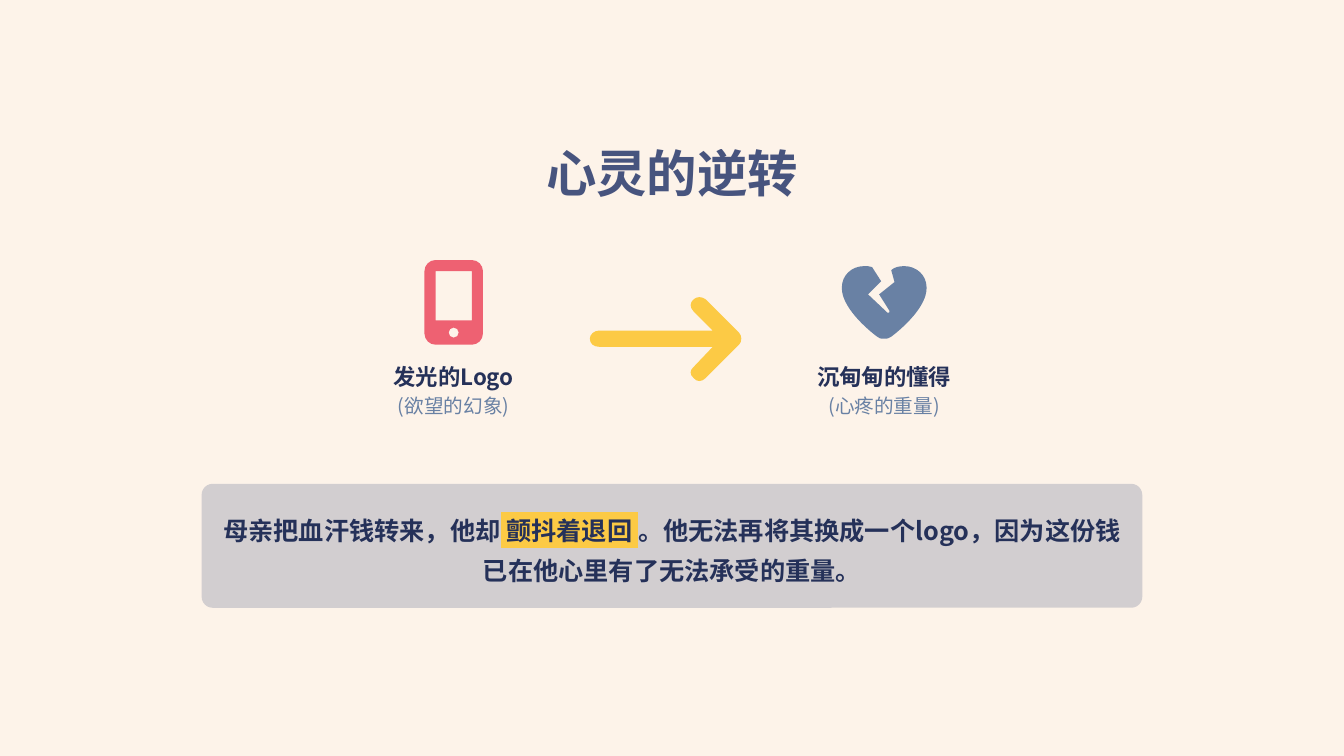
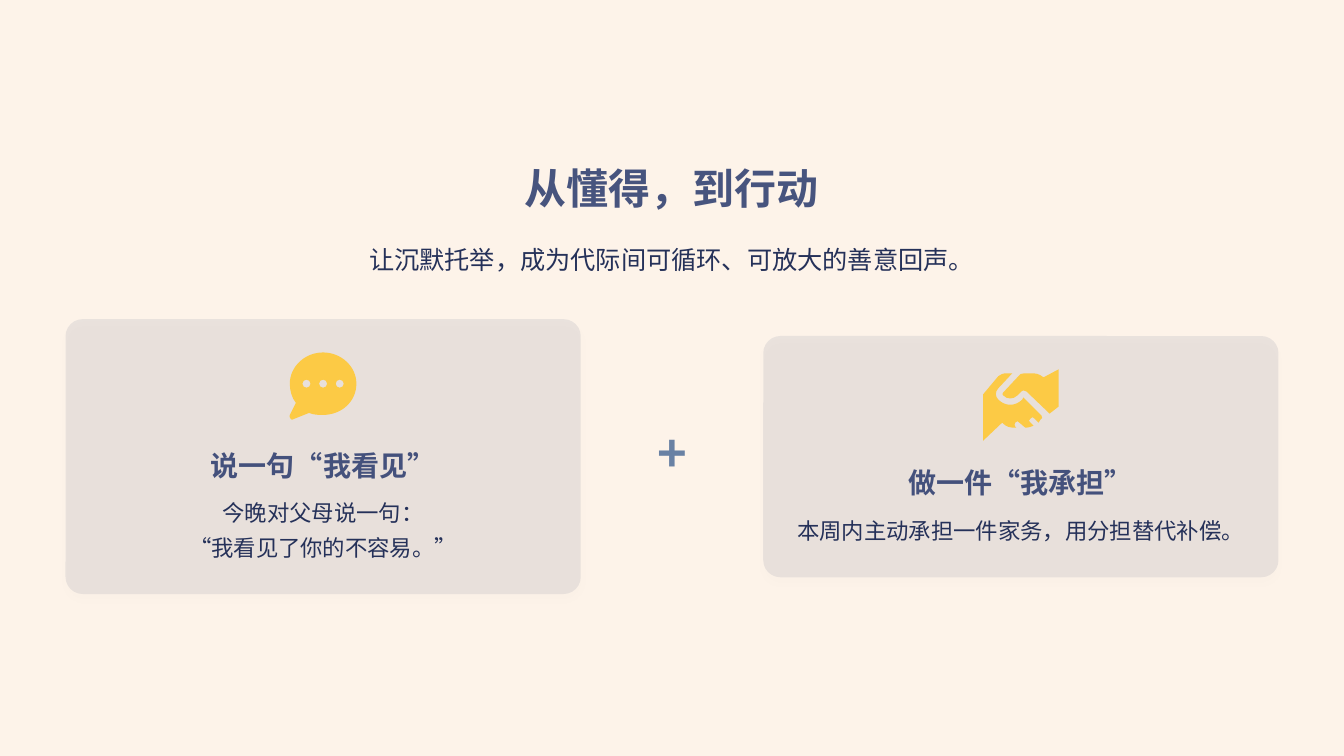
from lxml import etree
from pptx import Presentation
from pptx import util as u
from pptx.dml.color import RGBColor
from pptx.enum import shapes, text
from pptx.oxml.ns import qn

FONT = "Noto Sans CJK SC"
COLORS = {
    "cream": "FDF3E9",
    "indigo": "2A3A6D",
    "ink": "253159",
    "slate": "6981A4",
    "coral": "EE6172",
    "yellow": "FCCA45",
    "black": "000000",
}
TITLE_ALPHA = 85
CENTER, LEFT = text.PP_ALIGN.CENTER, text.PP_ALIGN.LEFT

# Outlines in hundredths of an inch: M move, L line, C cubic curve, O circle (centre, radius).
PHONE = """M 2 11 C 2 5 7 0 13 0 L 49 0 C 55 0 60 5 60 11 L 60 73 C 60 79 55 84 49 84
    L 13 84 C 7 84 2 79 2 73 L 2 11 M 13 11 L 13 60 L 49 60 L 49 11 L 13 11 O 31 72 5"""
ARROW = """M 148 73 C 151 70 151 64 148 61 L 115 28 C 111 25 106 25 103 28
    C 99 31 99 36 103 40 L 122 59 L 9 59 C 4 59 0 63 0 67 C 0 72 4 75 9 75 L 122 75
    L 103 95 C 99 98 99 103 103 106 C 106 110 111 110 115 106 L 148 73"""
BROKEN_HEART = """M 22 6 C 25 6 28 6 30 7 L 39 21 L 27 33 C 26 34 26 34 26 34
    C 26 35 27 35 27 35 L 45 52 C 45 52 46 53 47 52 C 47 52 47 51 47 50 L 37 34 L 52 22
    C 52 22 53 21 52 21 L 49 10 C 52 7 57 6 62 6 C 74 6 84 15 84 27 L 84 28
    C 84 46 61 67 49 76 C 47 78 44 78 42 78 C 39 78 37 78 35 76 C 23 67 0 46 0 28
    L 0 27 C 0 15 10 6 22 6"""
SPEECH = """M 33 62 C 51 62 66 49 66 31 C 66 14 51 0 33 0 C 15 0 0 14 0 31
    C 0 38 2 45 6 50 L 0 62 C -1 63 0 65 1 66 C 1 67 3 67 4 66 L 19 60
    C 24 62 28 62 33 62 O 16.5 31 4 O 33 31 4 O 49.5 31 4"""
HANDSHAKE = """M 35 7 L 20 23 C 19 24 19 25 20 26 C 24 30 30 30 34 26 L 38 22
    C 39 21 39 21 40 21 C 41 21 42 21 43 22 L 66 44 L 75 37 L 75 0 L 60 8 L 57 6
    C 55 5 53 4 50 4 L 41 4 C 41 4 41 4 41 4 C 38 4 36 5 35 7
    M 15 19 L 29 4 L 24 4 C 20 4 17 5 15 7 L 0 25 L 0 71 L 19 53 L 20 54
    C 23 57 27 58 31 58 L 33 58 L 32 57 C 31 56 31 54 32 53 C 33 51 35 51 36 53
    L 42 58 L 43 58 C 45 58 48 57 50 56 L 47 53 C 45 52 45 50 47 49
    C 48 47 50 47 51 49 L 55 53 L 57 50 C 59 49 59 48 58 46 L 40 28 L 39 30
    C 32 37 22 37 15 30 C 12 27 12 22 15 19"""


def set_solid(fill, color, alpha=100):
    fill.solid()
    fill.fore_color.rgb = RGBColor.from_string(COLORS[color])
    if alpha < 100:
        set_alpha(fill.fore_color._xFill.find(qn("a:srgbClr")), alpha)


def set_alpha(color_element, alpha):
    etree.SubElement(color_element, qn("a:alpha"), val=str(alpha * 1000))


def style_shape(shape, color, alpha=100):
    set_solid(shape.fill, color, alpha)
    shape.line.fill.background()
    shape.shadow.inherit = False


def add_soft_shadow(shape):
    effects = shape._element.spPr.find(qn("a:effectLst"))
    shadow = etree.SubElement(effects, qn("a:outerShdw"), blurRad=str(u.Pt(6)),
                              dist=str(u.Pt(4)), dir="5400000", rotWithShape="0")
    set_alpha(etree.SubElement(shadow, qn("a:srgbClr"), val=COLORS["black"]), 10)


def circle_commands(x, y, radius):
    k = radius * 0.55
    quarters = [((radius, k), (k, radius), (0, radius)),
                ((-k, radius), (-radius, k), (-radius, 0)),
                ((-radius, -k), (-k, -radius), (0, -radius)),
                ((k, -radius), (radius, -k), (radius, 0))]
    curves = [("C", [(x + dx, y + dy) for dx, dy in quarter]) for quarter in quarters]
    return [("M", [(x + radius, y)])] + curves


def outline_commands(outline):
    """Turn an outline into (command, points) pairs, with circles as four curves."""
    lengths = {"M": 2, "L": 2, "C": 6, "O": 3}
    tokens = iter(outline.split())
    commands = []
    for command in tokens:
        values = [float(next(tokens)) for _ in range(lengths[command])]
        if command == "O":
            commands += circle_commands(*values)
        else:
            commands.append((command, list(zip(values[::2], values[1::2]))))
    return commands


def fold_curves(shape, commands):
    """Join the three line points of each curve command into one cubic curve."""
    outline = next(shape._element.iter(qn("a:path")))
    lines = iter(outline.findall(qn("a:lnTo")))
    for command, points in commands:
        if command == "M":
            continue
        group = [next(lines) for _ in points]
        if command == "C":
            curve = etree.Element(qn("a:cubicBezTo"))
            group[0].addprevious(curve)
            for line in group:
                curve.append(line[0])
                outline.remove(line)


def add_icon(slide, outline, left, top, color):
    unit = u.Inches(0.01)
    commands = outline_commands(outline)
    contours = []
    for command, points in commands:
        if command == "M":
            contours.append([])
        contours[-1] += [(x * unit, y * unit) for x, y in points]
    builder = slide.shapes.build_freeform(*contours[0][0])
    for index, contour in enumerate(contours):
        if index:
            builder.move_to(*contour[0])
        builder.add_line_segments(contour[1:], close=True)
    icon = builder.convert_to_shape(u.Inches(left), u.Inches(top))
    fold_curves(icon, commands)
    style_shape(icon, color)


def add_backdrop(slide):
    box = (0, -0.13, 13.33, 7.72)
    backdrop = slide.shapes.add_shape(shapes.MSO_SHAPE.RECTANGLE, *map(u.Inches, box))
    style_shape(backdrop, "cream")


def add_panel(slide, box, radius, alpha):
    panel = slide.shapes.add_shape(shapes.MSO_SHAPE.ROUNDED_RECTANGLE, *map(u.Inches, box))
    panel.adjustments[0] = radius / min(box[2:])
    style_shape(panel, "indigo", alpha)
    return panel


def add_run(paragraph, words, size, color, bold=False, alpha=100, highlight=None):
    run = paragraph.add_run()
    run.text = words
    font = run.font
    font.size, font.bold, font.name = u.Pt(size), bold, FONT
    set_solid(font.fill, color, alpha)
    latin = run._r.get_or_add_rPr().find(qn("a:latin"))
    latin.addnext(etree.Element(qn("a:ea"), typeface=FONT))
    if highlight:
        marker = etree.Element(qn("a:highlight"))
        etree.SubElement(marker, qn("a:srgbClr"), val=COLORS[highlight])
        latin.addprevious(marker)


def add_text(slide, box, lines, size, color, align=CENTER, spacing=1.3, bold=False, alpha=100):
    """Each line is a list of (words, highlight colour) runs or a plain string."""
    frame = slide.shapes.add_textbox(*map(u.Inches, box)).text_frame
    frame.word_wrap = True
    frame.vertical_anchor = text.MSO_ANCHOR.MIDDLE
    frame.margin_left = frame.margin_right = frame.margin_top = frame.margin_bottom = 0
    for index, line in enumerate(lines):
        paragraph = frame.add_paragraph() if index else frame.paragraphs[0]
        paragraph.alignment, paragraph.line_spacing = align, spacing
        for words, highlight in [(line, None)] if isinstance(line, str) else line:
            add_run(paragraph, words, size, color, bold, alpha, highlight)


def add_title(slide, box, words, size, align=CENTER, spacing=1.0):
    add_text(slide, box, [words], size, "indigo", align, spacing, True, TITLE_ALPHA)


def add_concept(slide, center, top, icon, icon_width, color, label, note):
    width = 1.44
    left = center - width / 2
    add_icon(slide, icon, center - icon_width / 2, top, color)
    add_text(slide, (left, top + 0.95, width, 0.33), [label], 16, "ink", bold=True)
    add_text(slide, (left, top + 1.28, width, 0.28), [note], 14, "slate", spacing=1.2)


def add_quote(slide, box, runs):
    left, top, width, height = box
    add_panel(slide, box, 0.11, 20)
    add_text(slide, (left + 0.16, top + 0.22, width - 0.32, height - 0.44),
             [runs], 18, "ink", bold=True)


def add_action_card(slide, left, middle, icon, icon_width, title, lines):
    """The card grows with its lines and stays centred on middle."""
    width, body_height = 5.11, len(lines) / 3
    height = 2.06 + body_height
    top, center = middle - height / 2, left + width / 2
    add_soft_shadow(add_panel(slide, (left, top, width, height), 0.17, 9))
    add_icon(slide, icon, center - icon_width / 2, top + 0.33, "yellow")
    add_title(slide, (center - 1.18, top + 1.22, 2.36, 0.39), title, 20, spacing=1.2)
    add_text(slide, (left + 0.28, top + 1.72, width - 0.56, body_height), lines, 16, "ink")


def build_reversal(slide):
    add_title(slide, (5.29, 1.47, 2.75, 0.56), "心灵的逆转", 36, spacing=0.9)
    add_concept(slide, 4.5, 2.58, PHONE, 0.62, "coral", "发光的Logo", "(欲望的幻象)")
    add_icon(slide, ARROW, 5.85, 2.69, "yellow")
    add_concept(slide, 8.77, 2.58, BROKEN_HEART, 0.84, "slate", "沉甸甸的懂得", "(心疼的重量)")
    add_quote(slide, (2, 4.8, 9.33, 1.23), [
        ("母亲把血汗钱转来，他却", None),
        (" 颤抖着退回 ", "yellow"),
        ("。他无法再将其换成一个logo，因为这份钱已在他心里有了无法承受的重量。", None),
    ])


def build_action(slide):
    add_title(slide, (5.2, 1.61, 3.12, 0.5), "从懂得，到行动", 30, LEFT)
    add_text(slide, (3.66, 2.33, 6.12, 0.39),
             ["让沉默托举，成为代际间可循环、可放大的善意回声。"], 18, "ink", LEFT)
    middle = 4.53
    add_action_card(slide, 0.65, middle, SPEECH, 0.66, "说一句“我看见”",
                    ["今晚对父母说一句：", "“我看见了你的不容易。”"])
    add_text(slide, (6.52, middle - 0.28, 0.54, 0.56), ["+"], 36, "slate", LEFT, 0.9, True)
    add_action_card(slide, 7.57, middle, HANDSHAKE, 0.75, "做一件“我承担”",
                    ["本周内主动承担一件家务，用分担替代补偿。"])


def main():
    presentation = Presentation()
    presentation.slide_width, presentation.slide_height = u.Inches(13.33), u.Inches(7.5)
    for build in (build_reversal, build_action):
        slide = presentation.slides.add_slide(presentation.slide_layouts[6])
        add_backdrop(slide)
        build(slide)
    presentation.save("out.pptx")


if __name__ == "__main__":
    main()
